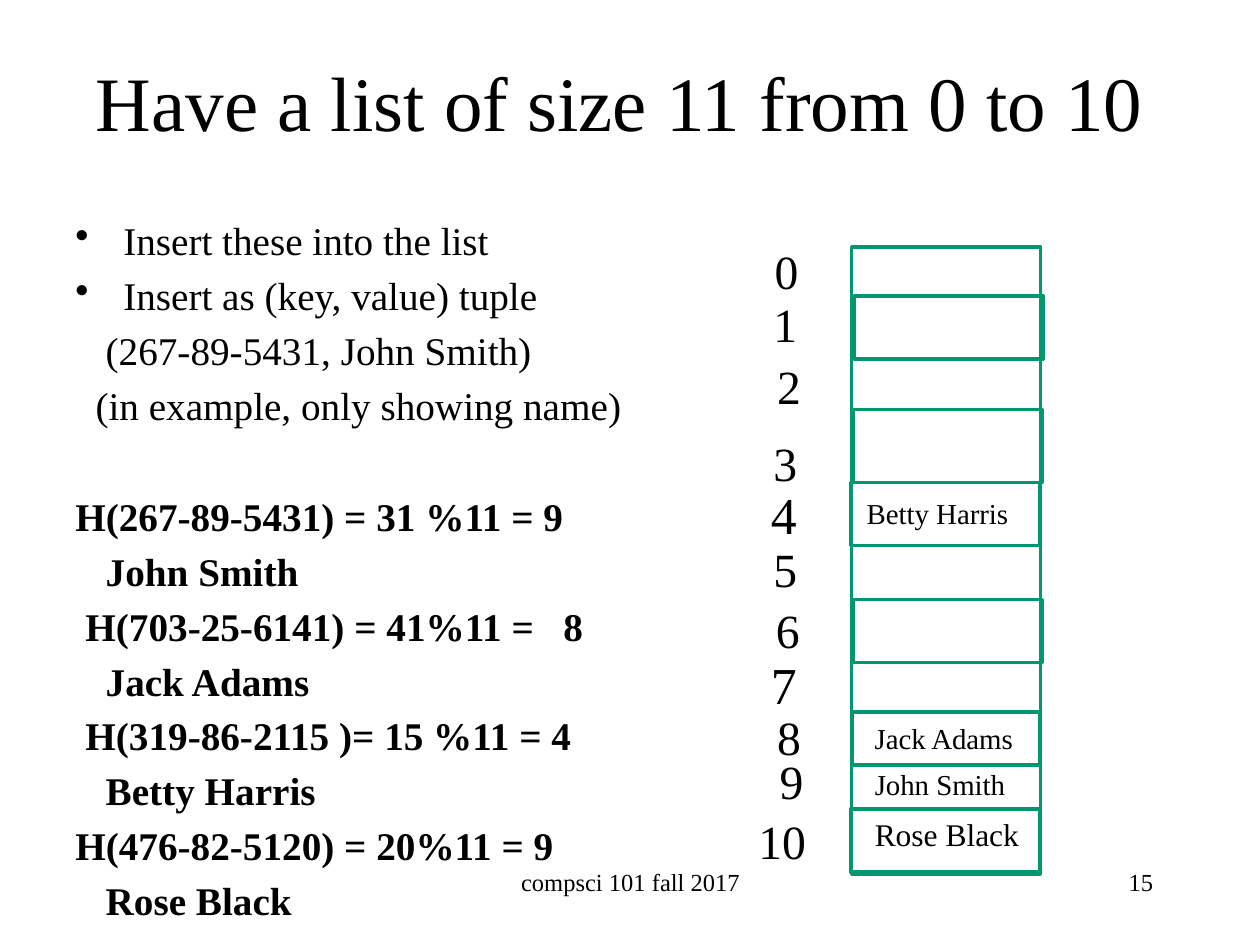
from typing import NamedTuple

from lxml.etree import SubElement
from pptx import Presentation
from pptx.dml.color import RGBColor
from pptx.enum.shapes import MSO_SHAPE as Preset
from pptx.enum.text import MSO_ANCHOR as Anchor, PP_ALIGN as Align
from pptx.oxml.ns import qn
from pptx.util import Inches, Pt

COLORS = {"text": "000000", "frame": "009771"}
FONT = "Times New Roman"
HANG = 0.38
SPACE = 0.08


class Box(NamedTuple):
    left: float
    top: float
    width: float
    height: float


class Line(NamedTuple):
    text: str
    indent: float = 0
    bold: bool = False
    bullet: bool = False
    before: float | None = None


class Index(NamedTuple):
    left: float
    top: float
    size: float = 27.2
    spacing: float = 0.8


class Entry(NamedTuple):
    name: str
    box: Box
    size: float = 16.5
    spacing: float | None = 0.8


CELLS = [
    Box(6.78, 2.35, 1.5, 0.5),
    Box(6.77, 3.25, 1.5, 0.58),
    Box(6.75, 3.83, 1.5, 0.5),
    Box(6.77, 4.76, 1.5, 0.5),
    Box(6.76, 5.65, 1.49, 0.42),
    Box(6.75, 6.42, 1.5, 0.5),
    Box(6.76, 1.96, 1.5, 4.98),
]

INDEXES = [
    Index(6.05, 1.96),
    Index(6.04, 2.38),
    Index(6.07, 2.87),
    Index(6.04, 3.48),
    Index(6.02, 3.84, 29.6, 0.9),
    Index(6.04, 4.32),
    Index(6.06, 4.81),
    Index(6.02, 5.23, 29.6),
    Index(6.07, 5.66),
    Index(6.09, 6.01),
    Index(5.92, 6.48),
]

ENTRIES = [
    Entry("John Smith", Box(6.75, 6, 1.42, 0.5)),
    Entry("Jack Adams", Box(6.78, 5.59, 1.42, 0.58)),
    Entry("Betty Harris", Box(6.73, 3.85, 1.42, 0.5)),
    Entry("Rose Black", Box(6.64, 6.35, 1.75, 0.53), 18, None),
]

BODY = [
    Line("Insert these into the list", bullet=True),
    Line("Insert as (key, value) tuple", bullet=True),
    Line("(267-89-5431, John Smith)", 3 * SPACE),
    Line("(in example, only showing name)", 2 * SPACE),
    Line("H(267-89-5431) = 31 %11 = 9", bold=True, before=36.6),
    Line("John Smith", 3 * SPACE, bold=True),
    Line("H(703-25-6141) = 41%11 =   8", SPACE, bold=True),
    Line("Jack Adams", 3 * SPACE, bold=True),
    Line("H(319-86-2115 )= 15 %11 = 4", SPACE, bold=True),
    Line("Betty Harris", 3 * SPACE, bold=True),
    Line("H(476-82-5120) = 20%11 = 9", bold=True),
    Line("Rose Black", 3 * SPACE, bold=True),
]


def place(box: Box) -> list:
    return [Inches(value) for value in box]


def format_para(para, line: Line, relative_gap: bool) -> None:
    if line.before is not None:
        para.space_before = Pt(line.before)
    elif relative_gap:
        para.space_before = Pt(0)
        gap = para._p.pPr.find(qn("a:spcBef"))
        gap.remove(gap[0])
        SubElement(gap, qn("a:spcPct")).set("val", "20000")
    properties = para._p.get_or_add_pPr()
    margin = HANG if line.bullet else line.indent
    properties.set("marL", str(Inches(margin)))
    properties.set("indent", str(Inches(-HANG if line.bullet else 0)))
    if line.bullet:
        SubElement(properties, qn("a:buChar")).set("char", "•")


def add_text(page, text: str | list[Line], box: Box, *, size: float,
             align=Align.LEFT, anchor=Anchor.TOP,
             spacing: float | None = None, relative_gap: bool = False) -> None:
    frame = page.shapes.add_textbox(*place(box)).text_frame
    frame.word_wrap = True
    frame.vertical_anchor = anchor
    lines = [Line(text)] if isinstance(text, str) else text
    for number, line in enumerate(lines):
        para = frame.add_paragraph() if number else frame.paragraphs[0]
        para.alignment = align
        if spacing:
            para.line_spacing = spacing
        format_para(para, line, relative_gap)
        span = para.add_run()
        span.text = line.text
        span.font.name = FONT
        span.font.size = Pt(size)
        span.font.bold = line.bold
        span.font.color.rgb = RGBColor.from_string(COLORS["text"])


def add_cell(page, box: Box) -> None:
    cell = page.shapes.add_shape(Preset.RECTANGLE, *place(box))
    cell.shadow.inherit = False
    cell.fill.background()
    cell.line.color.rgb = RGBColor.from_string(COLORS["frame"])
    cell.line.width = Pt(2)


def main() -> None:
    deck = Presentation()
    deck.slide_width, deck.slide_height = Inches(10), Inches(7.5)
    page = deck.slides.add_slide(deck.slide_layouts[6])

    add_text(page, "Have a list of size 11 from 0 to 10", Box(0.42, 0.17, 9, 1.25),
             size=44, align=Align.CENTER, anchor=Anchor.MIDDLE)
    add_text(page, "compsci 101 fall 2017", Box(3.42, 6.83, 3.17, 0.5),
             size=14, align=Align.CENTER)
    add_text(page, "15", Box(7.17, 6.83, 2.08, 0.5), size=14, align=Align.RIGHT)
    add_text(page, BODY, Box(0.5, 1.67, 5.25, 5), size=22.4, relative_gap=True)

    for box in CELLS:
        add_cell(page, box)
    for number, index in enumerate(INDEXES):
        add_text(page, str(number), Box(index.left, index.top, 0.83, 0.5),
                 size=index.size, spacing=index.spacing, relative_gap=True)
    for entry in ENTRIES:
        add_text(page, entry.name, entry.box, size=entry.size, align=Align.CENTER,
                 anchor=Anchor.MIDDLE, spacing=entry.spacing)

    deck.save("out.pptx")


if __name__ == "__main__":
    main()
